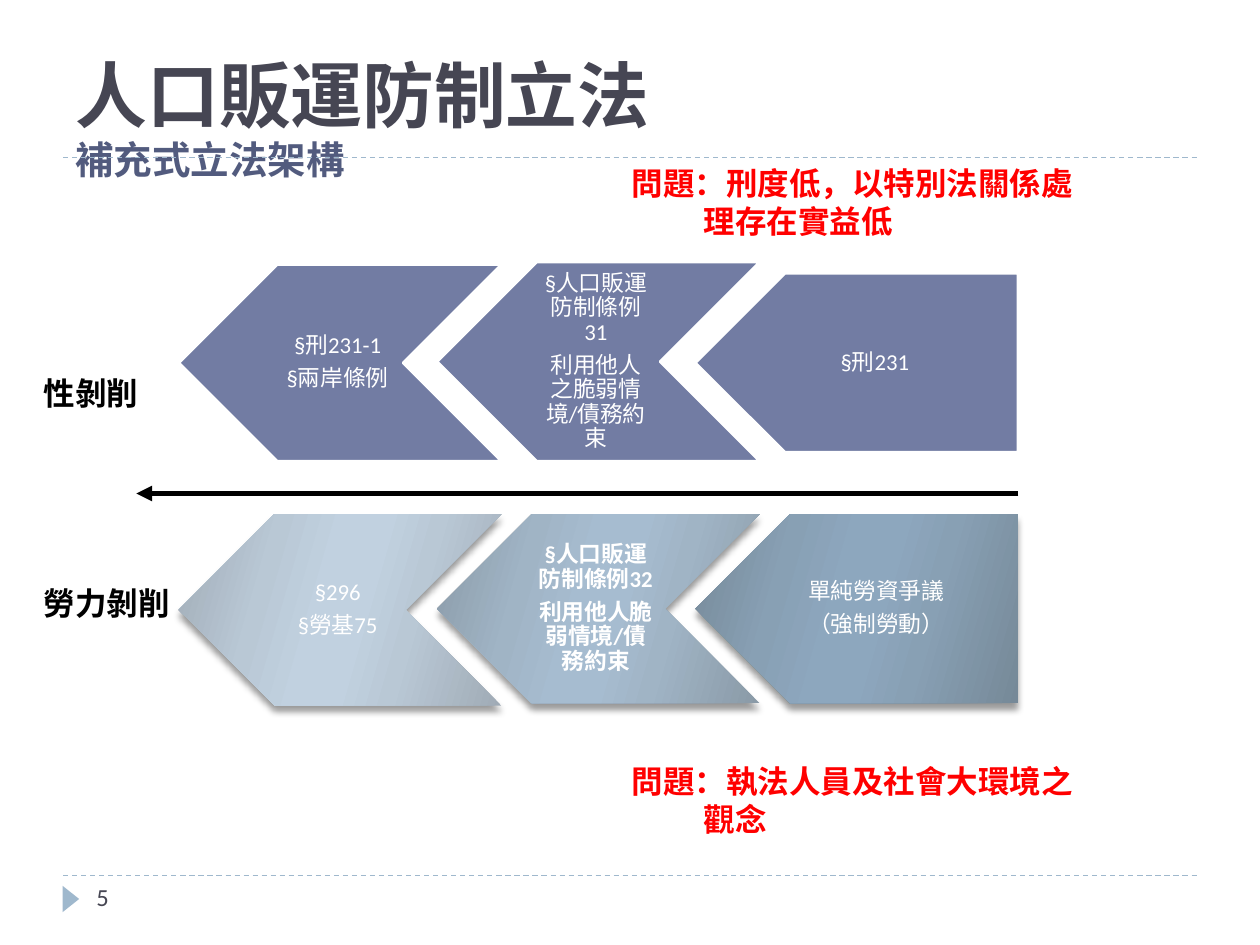
"""Build the slide on supplementary anti-trafficking legislation."""
from lxml import etree
from pptx import Presentation
from pptx.dml.color import RGBColor
from pptx.enum.dml import MSO_LINE
from pptx.enum.shapes import MSO_CONNECTOR, MSO_SHAPE as SHAPE
from pptx.enum.text import MSO_ANCHOR as ANCHOR, MSO_AUTO_SIZE, PP_ALIGN as ALIGN
from pptx.oxml import parse_xml
from pptx.oxml.ns import nsdecls, qn
from pptx.util import Pt

COLORS = {
    "ink": "464653", "subtitle": "525B7E", "black": "000000", "white": "FFFFFF",
    "red": "FF0000", "rule": "9FB8CD", "sex": "727CA3",
}
STOPS = (0, 30, 45, 55, 73, 100)


def write(box, lines, size=18, color="black", bold=False, align=ALIGN.LEFT, anchor=ANCHOR.TOP,
          insets=(7.2, 3.6, 7.2, 3.6), spacing=None, after=0, hang=0):
    frame = box.text_frame
    frame.word_wrap = True
    frame.auto_size = MSO_AUTO_SIZE.NONE
    frame.vertical_anchor = anchor
    frame.margin_left, frame.margin_top, frame.margin_right, frame.margin_bottom = map(Pt, insets)
    for index, line in enumerate(lines):
        para = frame.add_paragraph() if index else frame.paragraphs[0]
        para.alignment, para.line_spacing, para.space_after = align, spacing, Pt(after)
        if index and hang:
            para._p.get_or_add_pPr().set("marL", str(Pt(hang)))
        span = para.add_run()
        span.text = line
        span.font.name, span.font.size, span.font.bold = "Calibri", Pt(size), bold
        span.font.color.rgb = RGBColor.from_string(COLORS[color])


def draw_line(start, end, y, color, width):
    line = page.shapes.add_connector(MSO_CONNECTOR.STRAIGHT, Pt(start), Pt(y), Pt(end), Pt(y))
    line.line.color.rgb = RGBColor.from_string(COLORS[color])
    line.line.width = Pt(width)
    etree.SubElement(line._element.spPr, qn("a:effectLst"))
    return line


deck = Presentation()
deck.slide_width, deck.slide_height = Pt(720), Pt(540)
page = deck.slides.add_slide(deck.slide_layouts[5])

for y in (500.4, 90):
    draw_line(36, 684, y, "rule", 0.75).line.dash_style = MSO_LINE.DASH

marker = page.shapes.add_shape(SHAPE.ISOSCELES_TRIANGLE, Pt(33), Pt(509), Pt(15), Pt(9.4))
marker.rotation = 90
marker.shadow.inherit = False
marker.fill.solid()
marker.fill.fore_color.rgb = RGBColor.from_string(COLORS["rule"])
marker.line.fill.background()
number = page.shapes.add_textbox(Pt(48), Pt(500.4), Pt(156), Pt(29))
write(number, ["5"], size=14, color="ink")

ARROWS = [
    (2, 156.2, 102.2, 422.6, 159.2, ["§刑231"], None),
    (1, 149.8, 113.8, 306.7, 70.6, ["§人口販運防制條例31", "利用他人之脆弱情境/債務約束"], None),
    (0, 151.2, 112.3, 158.4, 72, ["§刑231-1", "§兩岸條例"], None),
    (2, 293.8, 108, 424, 157.7, ["單純勞資爭議", "（強制勞動）"], ("768998", "88A0B4", "8DA7BE")),
    (1, 293.8, 108, 303.8, 76.3, ["§人口販運防制條例32", "利用他人脆弱情境/債務約束"],
     ("8A9AA7", "A0B4C5", "A6BCD0")),
    (0, 293.8, 109.4, 157, 74.9, ["§296", "§勞基75"], ("A0ABB6", "B9C8D5", "C1D1E0")),
]
for column, top, height, text_left, text_width, lines, shades in ARROWS:
    kind = SHAPE.PENTAGON if column == 2 else SHAPE.CHEVRON
    arrow = page.shapes.add_shape(kind, Pt(102.2 + 147.6 * column), Pt(top), Pt(184.3), Pt(height))
    arrow.rotation = 180
    arrow.shadow.inherit = False
    if shades:
        arrow.line.fill.background()
        stops = "".join(
            f'<a:gs pos="{stop * 1000}"><a:srgbClr val="{shade}"/></a:gs>'
            for stop, shade in zip(STOPS, shades + shades[::-1]))
        arrow._element.spPr.find(qn("a:prstGeom")).addnext(parse_xml(
            f'<a:gradFill {nsdecls("a")} rotWithShape="1"><a:gsLst>{stops}</a:gsLst>'
            '<a:lin ang="960000" scaled="1"/></a:gradFill>'))
        arrow._element.spPr.find(qn("a:effectLst")).append(parse_xml(
            f'<a:outerShdw {nsdecls("a")} blurRad="{Pt(4)}" dist="{Pt(3.4)}" dir="5400000" '
            f'rotWithShape="0"><a:srgbClr val="{COLORS["black"]}"><a:alpha val="40000"/>'
            '</a:srgbClr></a:outerShdw>'))
    else:
        arrow.fill.solid()
        arrow.fill.fore_color.rgb = RGBColor.from_string(COLORS["sex"])
        arrow.line.color.rgb = RGBColor.from_string(COLORS["white"])
        arrow.line.width = Pt(1.5)
    label = page.shapes.add_textbox(Pt(text_left), Pt(top), Pt(text_width), Pt(height))
    write(label, lines, size=13, color="white", bold="32" in lines[0], align=ALIGN.CENTER,
          anchor=ANCHOR.MIDDLE, insets=(1.5, 3, 6 if column == 2 else 4.5, 3),
          spacing=0.9, after=4.55)

for text, top, width in (("性剝削", 210, 84), ("勞力剝削", 330, 102)):
    row_name = page.shapes.add_textbox(Pt(18), Pt(top), Pt(width), Pt(29))
    write(row_name, [text], bold=True)

direction = draw_line(582, 78, 282, "black", 3)
etree.SubElement(direction.line._get_or_add_ln(), qn("a:tailEnd"), type="triangle")

title = page.shapes.title
title.left, title.top, title.width, title.height = Pt(36), Pt(21.6), Pt(648), Pt(90)
write(title, ["人口販運防制立法"], size=41, color="ink", bold=True, anchor=ANCHOR.MIDDLE)
heading = title.text_frame.paragraphs[0]
heading.add_line_break()
subtitle = heading.add_run()
subtitle.text = "補充式立法架構"
subtitle.font.size, subtitle.font.bold = Pt(22), True
subtitle.font.color.rgb = RGBColor.from_string(COLORS["subtitle"])
for span in heading.runs:
    span.font.name = "Noto Sans CJK SC"

PROBLEMS = [
    (90, 51, ["問題：刑度低，以特別法關係處", "理存在實益低"]),
    (432, 73, ["問題：執法人員及社會大環境之", "觀念"]),
]
for top, height, lines in PROBLEMS:
    problem = page.shapes.add_textbox(Pt(354), Pt(top), Pt(270), Pt(height))
    write(problem, lines, color="red", bold=True, hang=41)

deck.save("out.pptx")
